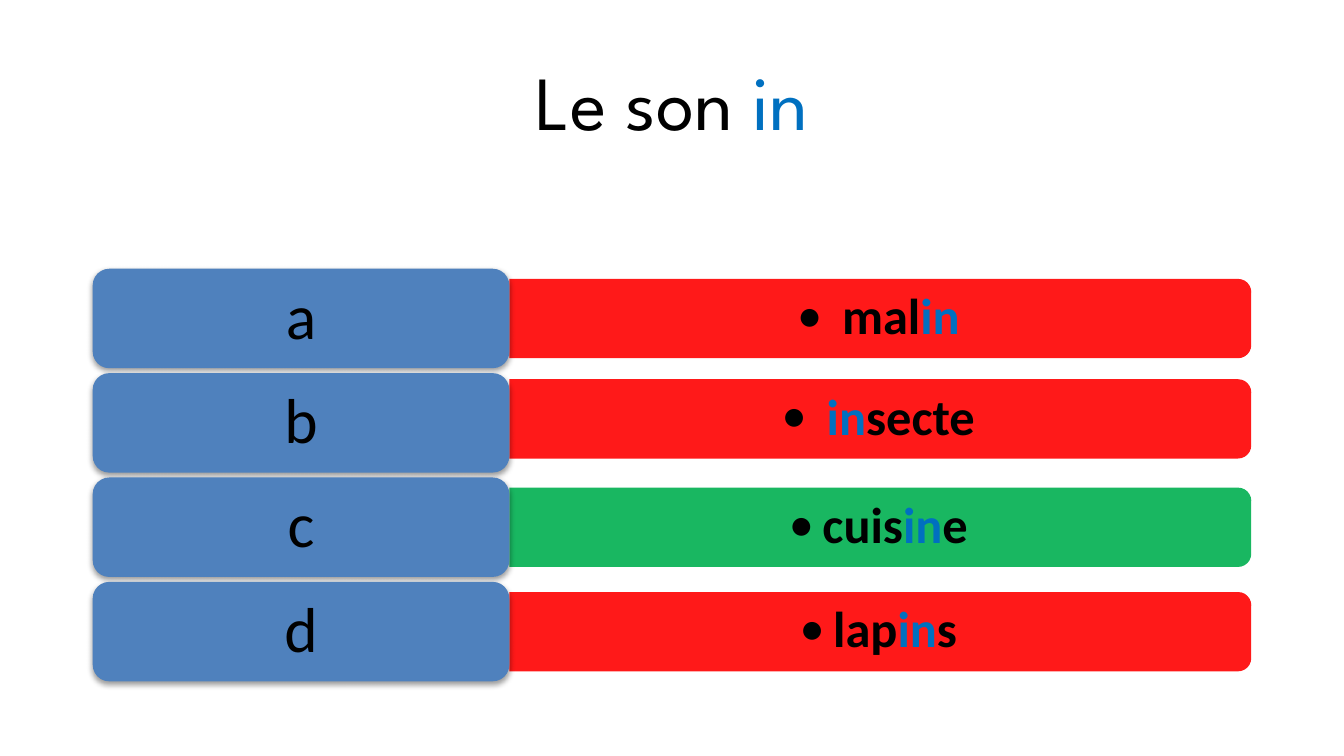
import dataclasses
import typing

import lxml.etree
import pptx
import pptx.dml.color
import pptx.enum.shapes
import pptx.enum.text
import pptx.oxml.ns
import pptx.util

Inches = pptx.util.Inches
Kind = pptx.enum.shapes.MSO_SHAPE
qn = pptx.oxml.ns.qn


@dataclasses.dataclass(frozen=True)
class Theme:
    ink: str = "000000"
    sound: str = "0070C0"
    label: str = "4F81BD"
    wrong: str = "FF0000"
    right: str = "00B050"
    font: str = "Calibri"
    head_font: str = "League Spartan"
    head_size: int = 41
    label_size: int = 34
    word_size: int = 27


@dataclasses.dataclass(frozen=True)
class Answer:
    letter: str
    start: str
    end: str
    color: str
    shift: float = 0


THEME = Theme()
SOUND = "in"
ANSWERS = [
    Answer("a", " mal", "", THEME.wrong),
    Answer("b", " ", "secte", THEME.wrong, -0.03),
    Answer("c", "cuis", "e", THEME.right),
    Answer("d", "lap", "s", THEME.wrong),
]
LEFT, TOP, LAST_TOP = 0.69, 2, 4.33
STEP = (LAST_TOP - TOP) / (len(ANSWERS) - 1)
LABEL_WIDTH, LABEL_HEIGHT = 3.1, 0.74
BAR_LEFT = LEFT + LABEL_WIDTH
BAR_WIDTH, BAR_HEIGHT = 5.52, 0.59
WORD_WIDTH, WORD_HEIGHT = 5.49, 0.53


def rgb(color: str) -> pptx.dml.color.RGBColor:
    return pptx.dml.color.RGBColor.from_string(color)


def add_node(parent: typing.Any, tag: str, **values: str) -> typing.Any:
    return lxml.etree.SubElement(parent, qn(tag), values)


def set_frame(frame: typing.Any, side: float, edge: float) -> None:
    form = {
        "word_wrap": True,
        "vertical_anchor": pptx.enum.text.MSO_ANCHOR.MIDDLE,
        "margin_left": Inches(side),
        "margin_right": Inches(side),
        "margin_top": Inches(edge),
        "margin_bottom": Inches(edge),
    }
    for name, value in form.items():
        setattr(frame, name, value)


def write(line: typing.Any, parts: list[tuple[str, str]], form: dict) -> None:
    """Write colored parts as runs of one centered line."""
    line.alignment = pptx.enum.text.PP_ALIGN.CENTER
    for text, color in parts:
        if text:
            run = line.add_run()
            run.text = text
            run.font.color.rgb = rgb(color)
            for name, value in form.items():
                setattr(run.font, name, value)


def add_block(slide: typing.Any, kind: typing.Any, box: tuple, color: str) -> typing.Any:
    shape = slide.shapes.add_shape(kind, *map(Inches, box))
    shape.shadow.inherit = False
    shape.fill.solid()
    shape.fill.fore_color.rgb = rgb(color)
    shape.line.fill.background()
    return shape


def add_bar(slide: typing.Any, answer: Answer, middle: float) -> None:
    """Add a bar, turned so that its round corners face right."""
    box = (BAR_LEFT + (BAR_WIDTH - BAR_HEIGHT) / 2, middle - BAR_WIDTH / 2,
           BAR_HEIGHT, BAR_WIDTH)
    bar = add_block(slide, Kind.ROUND_2_SAME_RECTANGLE, box, answer.color)
    bar.rotation = 90
    fill = bar.fill._xPr.find(qn("a:solidFill"))
    add_node(fill[0], "a:alpha", val="90000")


def add_word(slide: typing.Any, answer: Answer, middle: float) -> None:
    box = (BAR_LEFT, middle - WORD_HEIGHT / 2, WORD_WIDTH, WORD_HEIGHT)
    frame = slide.shapes.add_textbox(*map(Inches, box)).text_frame
    set_frame(frame, 0.11, 0.06)
    line = frame.paragraphs[0]
    line.level = 1
    line.line_spacing = 0.9
    parts = [(answer.start, THEME.ink), (SOUND, THEME.sound), (answer.end, THEME.ink)]
    write(line, parts, {"name": THEME.font, "size": pptx.util.Pt(THEME.word_size),
                        "bold": True})
    props = line._p.get_or_add_pPr()
    props.set("marL", str(Inches(0.25)))
    props.set("indent", str(-Inches(0.25)))
    add_node(props, "a:buFont", typeface=THEME.font)
    add_node(props, "a:buChar", char="•")


def add_label(slide: typing.Any, letter: str, top: float) -> None:
    box = (LEFT, top, LABEL_WIDTH, LABEL_HEIGHT)
    label = add_block(slide, Kind.ROUNDED_RECTANGLE, box, THEME.label)
    glow = label._element.spPr.find(qn("a:effectLst"))
    shade = add_node(glow, "a:outerShdw", blurRad=str(pptx.util.Pt(3.1)),
                     dist=str(pptx.util.Pt(1.6)), dir="5400000", rotWithShape="0")
    tint = add_node(shade, "a:srgbClr", val=THEME.ink)
    add_node(tint, "a:alpha", val="38000")
    set_frame(label.text_frame, 0.14, 0.07)
    line = label.text_frame.paragraphs[0]
    line.line_spacing = 0.9
    write(line, [(letter, THEME.ink)],
          {"name": THEME.font, "size": pptx.util.Pt(THEME.label_size)})


def add_title(slide: typing.Any) -> None:
    title = slide.shapes.title
    place = {"left": LEFT, "top": 0.2, "width": 8.62, "height": 1.09}
    for name, value in place.items():
        setattr(title, name, Inches(value))
    set_frame(title.text_frame, 0.1, 0.05)
    write(title.text_frame.paragraphs[0],
          [("Le son ", THEME.ink), (SOUND, THEME.sound)],
          {"name": THEME.head_font, "size": pptx.util.Pt(THEME.head_size)})


def main() -> None:
    deck = pptx.Presentation()
    deck.slide_width = Inches(10)
    deck.slide_height = deck.slide_width * 9 // 16
    slide = deck.slides.add_slide(deck.slide_layouts.get_by_name("Title Only"))
    add_title(slide)
    for row, answer in enumerate(ANSWERS):
        top = TOP + row * STEP
        middle = top + LABEL_HEIGHT / 2 + answer.shift
        add_bar(slide, answer, middle)
        add_word(slide, answer, middle)
        add_label(slide, answer.letter, top)
    deck.save("out.pptx")


if __name__ == "__main__":
    main()
